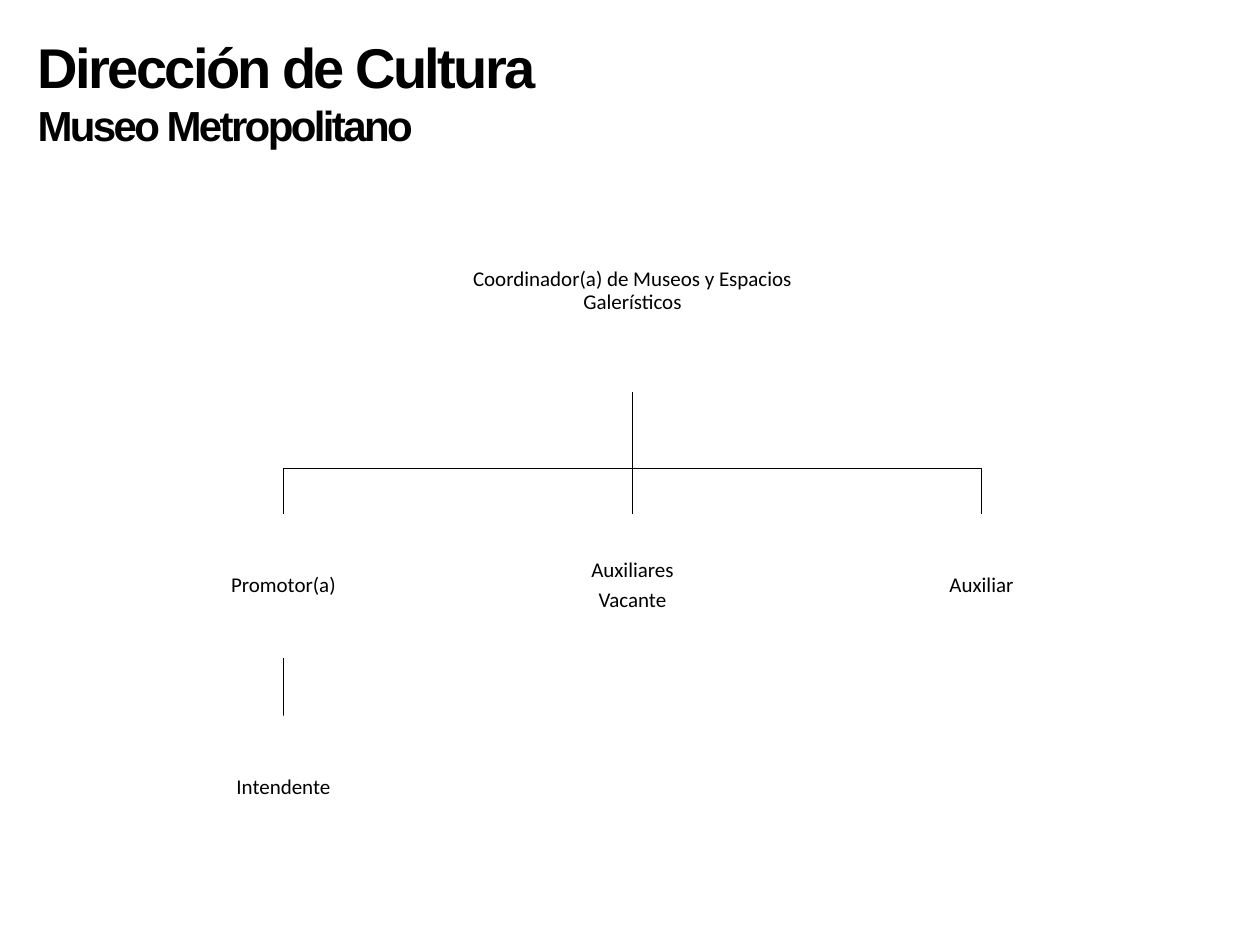
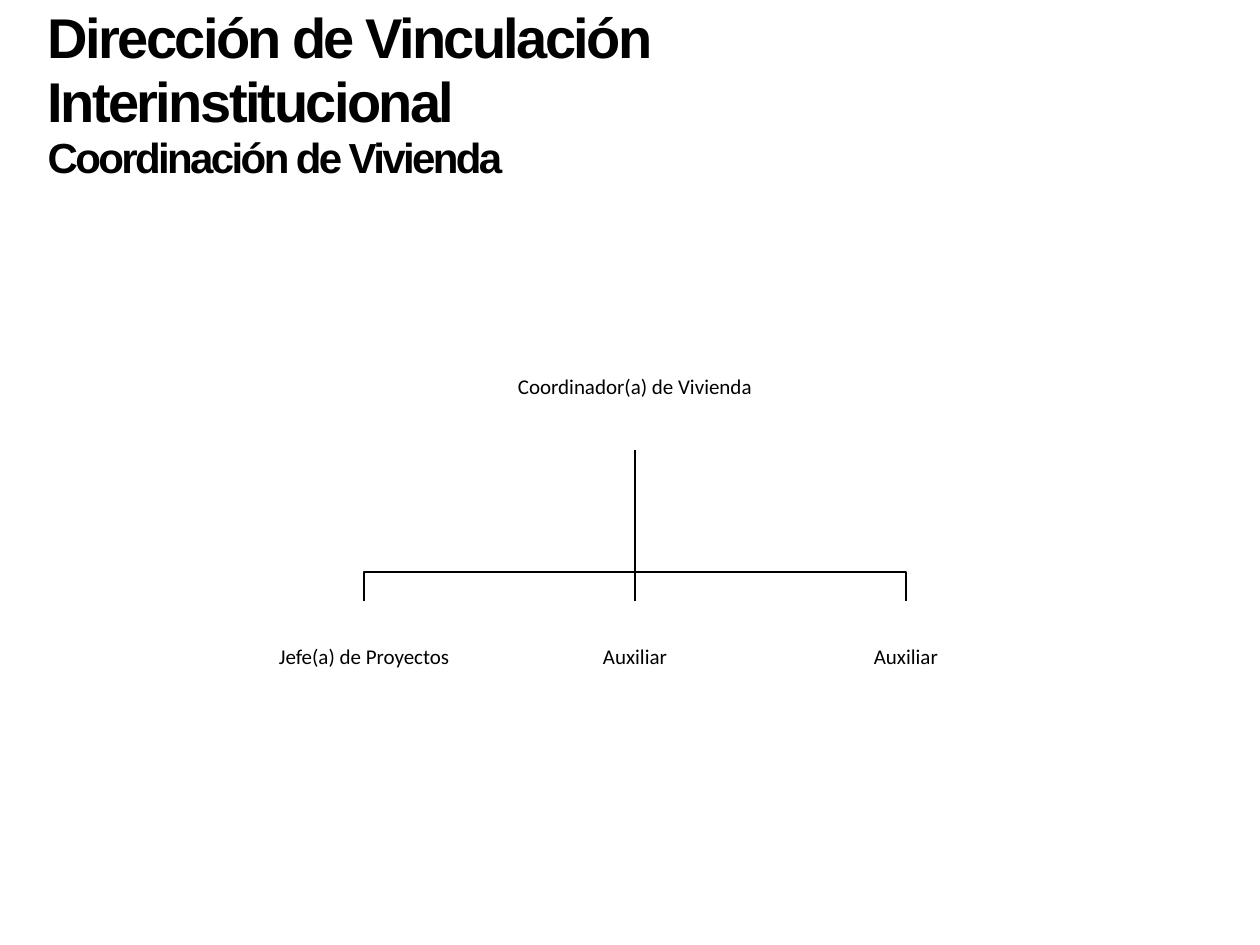
import pptx
import pptx.util
import pptx.dml.color
import pptx.enum.shapes
import pptx.enum.text
import pptx.oxml.xmlchemy
from lxml import etree

BLACK = pptx.dml.color.RGBColor(0, 0, 0)
WHITE = pptx.dml.color.RGBColor(255, 255, 255)
WIDTH, HEIGHT = pptx.util.Inches(10), pptx.util.Inches(7.5)
COLUMNS = 100
CELL = WIDTH // COLUMNS  # square grid: 100 columns by 75 rows

TITLE = {"name": "Arial", "size": pptx.util.Pt(32), "bold": True}
SUBTITLE = {**TITLE, "size": pptx.util.Pt(24)}
NODE = {"name": "Calibri", "size": pptx.util.Pt(12), "bold": False}
TITLE_TRACKING = "-150"
NODE_MARGIN = pptx.util.Inches(0.01)
NODE_SPACE_AFTER = pptx.util.Pt(4.2)


def cells(*counts):
    return [round(n * CELL) for n in counts]


def add_run(p, text, style):
    r = p.add_run()
    r.text = text
    for name, value in style.items():
        setattr(r.font, name, value)
    r.font.color.rgb = BLACK
    return r


def add_title(s, title, subtitle, box, anchor, spacing):
    tf = s.shapes.add_textbox(*cells(*box)).text_frame
    tf.word_wrap = True
    tf.vertical_anchor = anchor
    for p, text, style in ((tf.paragraphs[0], title, TITLE),
                           (tf.add_paragraph(), subtitle, SUBTITLE)):
        p.line_spacing = spacing
        r = add_run(p, text, style)
        r.font._element.set("spc", TITLE_TRACKING)


def add_node(s, lines, center, top, size, spacing=0.9):
    """Place a white box with centred lines of text around a grid column."""
    width, height = size
    sp = s.shapes.add_shape(pptx.enum.shapes.MSO_SHAPE.RECTANGLE,
                            *cells(center - width / 2, top, width, height))
    sp.shadow.inherit = False
    sp.fill.solid()
    sp.fill.fore_color.rgb = WHITE
    sp.line.fill.background()
    tf = sp.text_frame
    tf.word_wrap = True
    tf.vertical_anchor = pptx.enum.text.MSO_ANCHOR.MIDDLE
    for side in ("left", "top", "right", "bottom"):
        setattr(tf, f"margin_{side}", NODE_MARGIN)
    for i, line in enumerate(lines):
        p = tf.add_paragraph() if i else tf.paragraphs[0]
        p.alignment = pptx.enum.text.PP_ALIGN.CENTER
        p.line_spacing = spacing
        p.space_after = NODE_SPACE_AFTER
        add_run(p, line, NODE)


def style_line(sp):
    sp.line.color.rgb = BLACK
    sp.line.width = pptx.util.Pt(1)


def add_straight(s, x, top, bottom):
    sp = s.shapes.add_connector(pptx.enum.shapes.MSO_CONNECTOR.STRAIGHT,
                                *cells(x, top, x, bottom))
    style_line(sp)
    etree.SubElement(sp._element.spPr, pptx.oxml.ns.qn("a:effectLst"))


def add_branch(s, parent, child, top, bus, bottom):
    """Draw the bent line from a parent down to the bus and on to a child."""
    builder = s.shapes.build_freeform(*cells(parent, top))
    corners = ((parent, bus), (child, bus), (child, bottom))
    builder.add_line_segments([cells(*c) for c in corners], close=False)
    sp = builder.convert_to_shape()
    sp.shadow.inherit = False
    sp.fill.background()
    style_line(sp)


def add_chart_tree(s, root, root_top, root_size, children, center, step,
                   bus, top, size, spacing):
    """Draw a root over a row of evenly spaced children; return their columns."""
    root_bottom = root_top + root_size[1]
    columns = [center + step * (i - (len(children) - 1) / 2)
               for i in range(len(children))]
    for x in columns:
        if x == center:
            add_straight(s, x, root_bottom, top)
        else:
            add_branch(s, center, x, root_bottom, bus, top)
    add_node(s, [root], center, root_top, root_size)
    for x, lines in zip(columns, children):
        add_node(s, lines, x, top, size, spacing)
    return columns


def add_museum_slide(prs):
    s = prs.slides.add_slide(prs.slide_layouts[6])
    size, top, lower_top = (20.4, 11.4), 40.8, 56.8
    columns = add_chart_tree(
        s, "Coordinador(a) de Museos y Espacios Galerísticos", 15.1, (28.2, 16),
        [["Promotor(a)"], ["Auxiliares", "Vacante"], ["Auxiliar"]],
        center=50.2, step=27.7, bus=37.2, top=top, size=size, spacing=0.9)
    add_straight(s, columns[0], top + size[1], lower_top)
    add_node(s, ["Intendente"], columns[0], lower_top, size)
    add_title(s, "Dirección de Cultura", "Museo Metropolitano",
              (2, 2.1, 79.5, 10.4), pptx.enum.text.MSO_ANCHOR.TOP, 1.0)


def add_housing_slide(prs):
    s = prs.slides.add_slide(prs.slide_layouts[6])
    add_chart_tree(
        s, "Coordinador(a) de Vivienda", 25.8, (23.6, 9.9),
        [["Jefe(a) de Proyectos"], ["Auxiliar"], ["Auxiliar"]],
        center=50.4, step=21.5, bus=45.4, top=47.7, size=(16.9, 8.8), spacing=1.0)
    add_title(s, "Dirección de Vinculación Interinstitucional",
              "Coordinación de Vivienda", (2.8, 0.4, 75.3, 14.3),
              pptx.enum.text.MSO_ANCHOR.MIDDLE, 0.95)


def main():
    prs = pptx.Presentation()
    prs.slide_width, prs.slide_height = WIDTH, HEIGHT
    add_museum_slide(prs)
    add_housing_slide(prs)
    prs.save("out.pptx")


if __name__ == "__main__":
    main()
